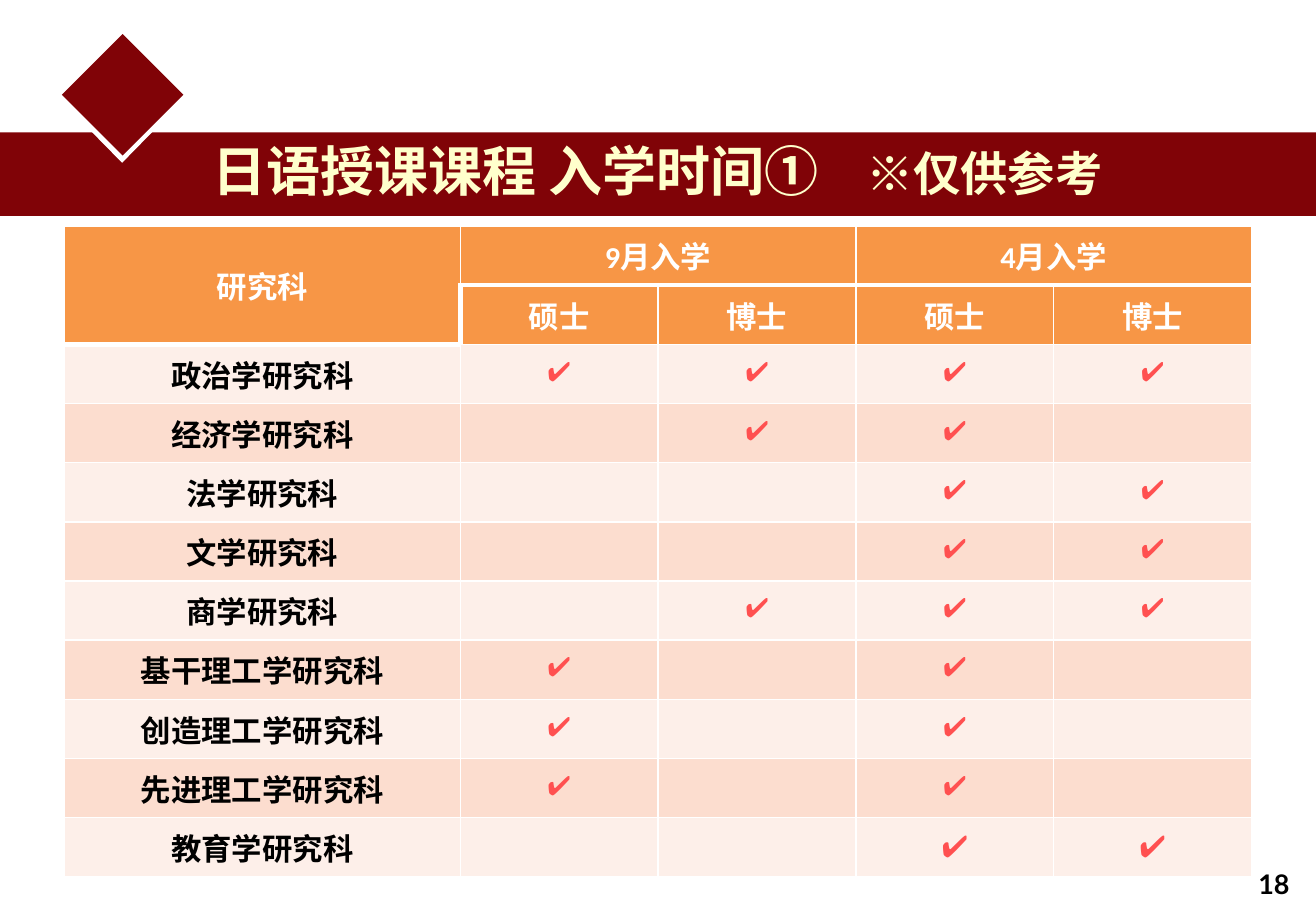
from dataclasses import dataclass

from lxml.etree import SubElement
from pptx import Presentation
from pptx.dml.color import RGBColor
from pptx.enum.shapes import MSO_SHAPE as Shape
from pptx.enum.text import MSO_ANCHOR as Anchor, PP_ALIGN as Align
from pptx.oxml.ns import qn
from pptx.util import Pt

MAROON, CREAM, WHITE, BLACK = "800307", "FFFFCC", "FFFFFF", "000000"
ORANGE, CHECK_RED = "F79646", "FF5050"
BANDS = ("FDEFE9", "FCDDCF")
CJK = "Noto Sans CJK SC"


@dataclass(frozen=True)
class Style:
    size: float
    font: str
    color: str


@dataclass(frozen=True)
class Block:
    kind: Shape
    left: float
    top: float
    width: float
    height: float
    color: str
    rotation: float = 0


@dataclass(frozen=True)
class School:
    name: str
    marks: str  # one letter per column: x = admits, . = does not
    check: Style = Style(16, "Courier New", CHECK_RED)


HEADER = Style(18, "Roboto", WHITE)
NAME = Style(18, "Roboto", BLACK)

BLOCKS = [
    Block(Shape.RECTANGLE, 0, 78.5, 781, 49.5, MAROON),
    Block(Shape.ISOSCELES_TRIANGLE, 54, 77.8, 36.7, 18.7, WHITE, 180),
    Block(Shape.DIAMOND, 36.7, 20.2, 72, 72, MAROON),
]

SCHOOLS = [
    School("政治学研究科", "xxxx"),
    School("经济学研究科", ".xx."),
    School("法学研究科", "..xx"),
    School("文学研究科", "..xx"),
    School("商学研究科", ".xxx"),
    School("基干理工学研究科", "x.x."),
    School("创造理工学研究科", "x.x."),
    School("先进理工学研究科", "x.x."),
    School("教育学研究科", "..xx", Style(18, "Roboto", CHECK_RED)),
]
MONTHS = ("9", "4")
DEGREES = ("硕士", "博士")


def rgb(color: str) -> RGBColor:
    return RGBColor.from_string(color)


def style_paragraph(p, style: Style) -> None:
    p.font.size, p.font.bold = Pt(style.size), True
    p.font.color.rgb = rgb(style.color)
    p.font.name = style.font
    SubElement(p._p.pPr.find(qn("a:defRPr")), qn("a:ea"), typeface=CJK)


def add_run(p, text: str):
    r = p.add_run()
    r.text = text
    return r


def add_block(slide, block: Block) -> None:
    sp = slide.shapes.add_shape(block.kind, Pt(block.left), Pt(block.top),
                                Pt(block.width), Pt(block.height))
    sp.shadow.inherit = False
    sp.rotation = block.rotation
    sp.fill.solid()
    sp.fill.fore_color.rgb = rgb(block.color)
    sp.line.fill.background()


def add_text(slide, left: float, top: float, width: float, height: float,
             style: Style, wrap: bool):
    sp = slide.shapes.add_textbox(Pt(left), Pt(top), Pt(width), Pt(height))
    tf = sp.text_frame
    tf.word_wrap = wrap
    tf.vertical_anchor = Anchor.MIDDLE
    p = tf.paragraphs[0]
    style_paragraph(p, style)
    return p


def border_width(side: str, row: int, col: int) -> int:
    """Thick lines run under the header cells and beside the first degree."""
    thick = {
        "L": (row, col) == (1, 1),
        "R": False,
        "T": (row == 1 and col > 0) or (row, col) == (2, 0),
        "B": (row == 0 and col > 0) or (row < 2 and col == 0),
    }
    return 3 if thick[side] else 1


def format_cell(cell, row: int, col: int, fill: str) -> None:
    tc_pr = cell._tc.get_or_add_tcPr()
    for side in "LRTB":
        ln = SubElement(tc_pr, qn(f"a:ln{side}"),
                        w=str(Pt(border_width(side, row, col))))
        SubElement(SubElement(ln, qn("a:solidFill")), qn("a:srgbClr"), val=WHITE)
    cell.fill.solid()
    cell.fill.fore_color.rgb = rgb(fill)
    cell.vertical_anchor = Anchor.MIDDLE


def write_cell(cell, text: str, style: Style):
    p = cell.text_frame.paragraphs[0]
    p.alignment = Align.CENTER
    style_paragraph(p, style)
    return add_run(p, text)


def add_schedule(slide) -> None:
    widths = [234.6] + [117.25] * len(MONTHS) * len(DEGREES)
    row_height = 35.08
    rows = len(SCHOOLS) + 2
    table = slide.shapes.add_table(rows, len(widths), Pt(38.2), Pt(134), Pt(sum(widths)),
                                   Pt(row_height * rows)).table
    table.first_row = table.horz_banding = False
    for column, width in zip(table.columns, widths):
        column.width = Pt(width)
    for i, row in enumerate(table.rows):
        row.height = Pt(row_height)
        for j, cell in enumerate(row.cells):
            format_cell(cell, i, j, ORANGE if i < 2 else BANDS[i % 2])

    # Two header rows
    table.cell(0, 0).merge(table.cell(1, 0))
    write_cell(table.cell(0, 0), "研究科", HEADER)
    for m, month in enumerate(MONTHS):
        first = 1 + m * len(DEGREES)
        cell = table.cell(0, first)
        cell.merge(table.cell(0, first + len(DEGREES) - 1))
        write_cell(cell, month, HEADER).font.name = "Calibri"
        add_run(cell.text_frame.paragraphs[0], "月入学")
        for d, degree in enumerate(DEGREES):
            write_cell(table.cell(1, first + d), degree, HEADER)

    # One row per graduate school
    for i, school in enumerate(SCHOOLS, start=2):
        write_cell(table.cell(i, 0), school.name, NAME)
        for j, mark in enumerate(school.marks, start=1):
            if mark == "x":
                write_cell(table.cell(i, j), "✔", school.check)


def main() -> None:
    prs = Presentation()
    prs.slide_width, prs.slide_height = Pt(780), Pt(540)
    slide = prs.slides.add_slide(prs.slide_layouts[6])

    # Page number and title band
    add_run(add_text(slide, 738.7, 510.5, 41.8, 26.6, Style(16, "Lato", BLACK), False), "18")
    for block in BLOCKS:
        add_block(slide, block)
    title = add_text(slide, 118.8, 77.8, 600, 46, Style(32, CJK, CREAM), True)
    add_run(title, "日语授课课程 入学时间①")
    add_run(title, "　※仅供参考").font.size = Pt(28)

    # Admission table
    add_schedule(slide)
    prs.save("out.pptx")


if __name__ == "__main__":
    main()
